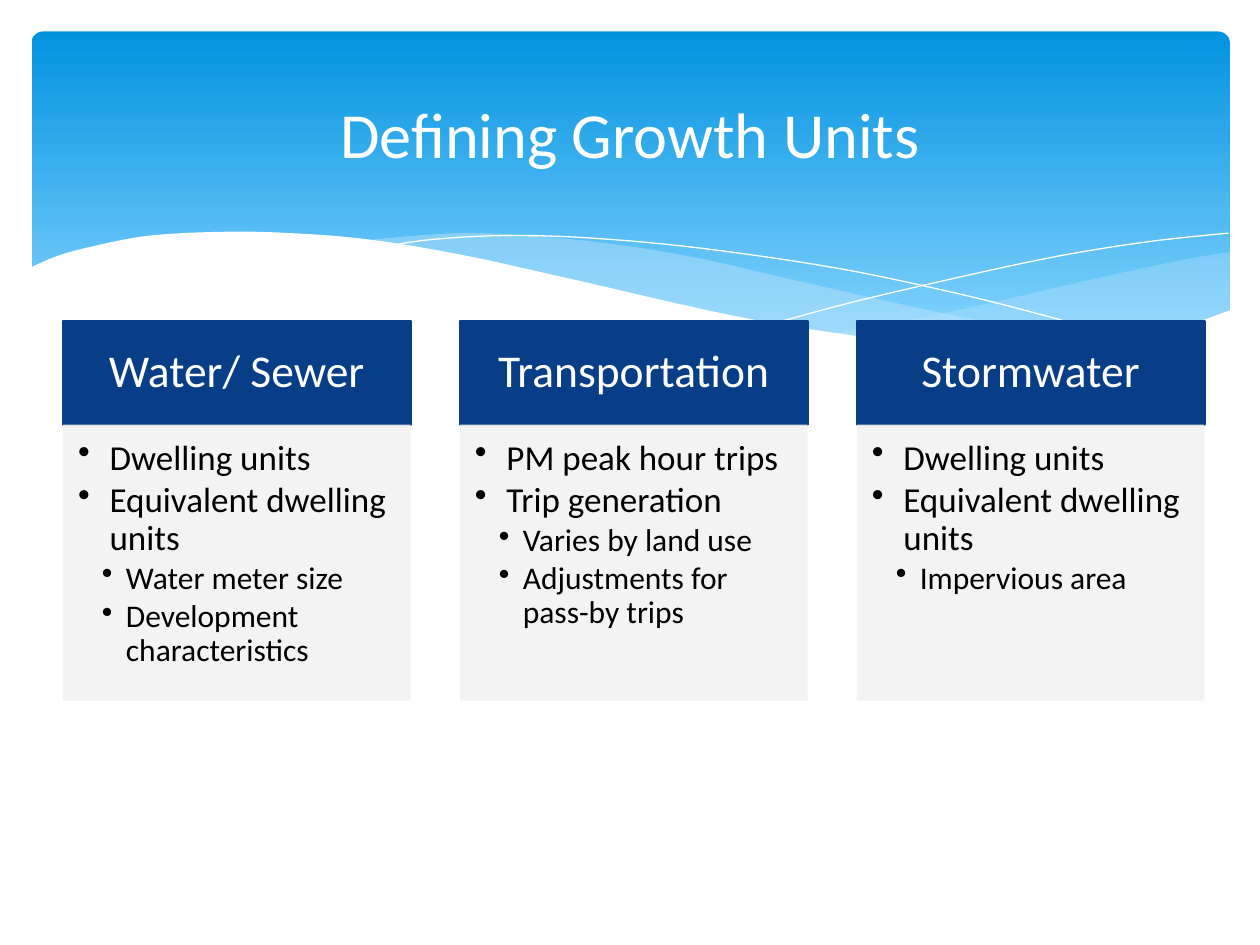
from lxml import etree
from pptx import Presentation
from pptx.dml.color import RGBColor
from pptx.enum.shapes import MSO_SHAPE
from pptx.enum.text import MSO_ANCHOR, PP_ALIGN
from pptx.oxml.ns import qn
from pptx.util import Inches, Pt

FONT = "Calibri"
WHITE, NAVY, GREY, BLACK, PALE_BLUE = "FFFFFF", "073E87", "F2F2F2", "000000", "C6E7FC"
SKY_TOP, SKY_BOTTOM = "0293E0", "83D3FE"

RIGHT_WAVE = [
    [(9.76, 2), (9.35, 2.07), (8.61, 2.23), (7.79, 2.42), (7.06, 2.57), (6.61, 2.65)],
    [(6.61, 2.65), (7.05, 2.71), (7.57, 2.76), (8.03, 2.78), (8.54, 2.76),
     (8.97, 2.7), (9.35, 2.62), (9.76, 2.47)],
]
MIDDLE_WAVE = [
    [(8.93, 2.73), (8.37, 2.65), (7.41, 2.47), (6.29, 2.22), (5.55, 2.05),
     (4.89, 1.94), (4.2, 1.87), (3.61, 1.85), (2.86, 1.91)],
    [(2.86, 1.91), (3.62, 2.03), (4.49, 2.22), (5.3, 2.4), (6.18, 2.58),
     (6.95, 2.7), (7.61, 2.77), (8.18, 2.78), (8.93, 2.73)],
]
FALLING_LINE = [[(3.09, 1.95), (3.44, 1.9), (4.01, 1.87), (4.69, 1.89), (5.56, 1.97),
                 (6.65, 2.13), (7.6, 2.33), (8.31, 2.51), (9.07, 2.72)]]
RISING_LINE = [[(6.13, 2.57), (6.72, 2.41), (7.48, 2.23), (8.36, 2.04),
                (9.1, 1.92), (9.75, 1.85)]]
WHITE_WAVE = [
    [(9.77, 2.46), (9.3, 2.62), (8.75, 2.73), (8.09, 2.77), (7.44, 2.74), (6.68, 2.65),
     (5.79, 2.5), (4.47, 2.2), (3.65, 2.02), (2.92, 1.9), (2.3, 1.85), (1.77, 1.84),
     (1.19, 1.87), (0.76, 1.95), (0.46, 2.03), (0.23, 2.13)],
    [(0.23, 3.29), (9.77, 3.29)],
]
COLUMNS = [
    ("Water/ Sewer", [(1, "Dwelling units"), (1, "Equivalent dwelling units"),
                      (2, "Water meter size"), (2, "Development characteristics")]),
    ("Transportation", [(1, "PM peak hour trips"), (1, "Trip generation"),
                        (2, "Varies by land use"), (2, "Adjustments for pass-by trips")]),
    ("Stormwater", [(1, "Dwelling units"), (1, "Equivalent dwelling units"),
                    (2, "Impervious area")]),
]
LEVEL_STYLES = {1: (20, 0.25, 0.25), 2: (18, 0.38, 0.19)}


def color(value):
    """Turn a hex string into a colour."""
    return RGBColor.from_string(value)


def paint(shape, fill=None, opacity=100, line=None, width=0):
    """Set the fill, its opacity and the outline of a shape."""
    shape.shadow.inherit = False
    if fill:
        shape.fill.solid()
        shape.fill.fore_color.rgb = color(fill)
        if opacity < 100:
            tint = shape.fill._xPr.find(".//" + qn("a:srgbClr"))
            etree.SubElement(tint, qn("a:alpha"), val=str(opacity * 1000))
    else:
        shape.fill.background()
    if line:
        shape.line.color.rgb = color(line)
        shape.line.width = Pt(width)
    else:
        shape.line.fill.background()


def smooth(points, steps=6):
    """Return points along a Catmull-Rom curve through the given points."""
    if len(points) < 3:
        return points
    padded = [points[0], *points, points[-1]]
    curve = [points[0]]
    for a, b, c, d in zip(padded, padded[1:], padded[2:], padded[3:]):
        for step in range(1, steps + 1):
            t = step / steps
            curve.append(tuple(
                (2 * q + (r - p) * t + (2 * p - 5 * q + 4 * r - s) * t ** 2
                 + (3 * q - p - 3 * r + s) * t ** 3) / 2
                for p, q, r, s in zip(a, b, c, d)))
    return curve


def add_wave(page, edges, close=True, **style):
    """Draw an outline made of smooth edges."""
    points = [(Inches(x), Inches(y)) for edge in edges for x, y in smooth(edge)]
    builder = page.shapes.build_freeform(*points[0])
    builder.add_line_segments(points[1:], close=close)
    paint(builder.convert_to_shape(), **style)


def add_backdrop(page, left, top, width, height):
    """Draw the sky panel and the waves across its lower edge."""
    panel = page.shapes.add_shape(MSO_SHAPE.ROUNDED_RECTANGLE, left, top, width, height)
    panel.adjustments[0] = 0.034
    paint(panel)
    panel.fill.gradient()
    panel.fill.gradient_angle = 270
    for stop, position, value in zip(panel.fill.gradient_stops, (0, 0.9), (SKY_TOP, SKY_BOTTOM)):
        stop.position = position
        stop.color.rgb = color(value)
    add_wave(page, RIGHT_WAVE, fill=PALE_BLUE, opacity=29)
    add_wave(page, MIDDLE_WAVE, fill=PALE_BLUE, opacity=40)
    for line in (FALLING_LINE, RISING_LINE):
        add_wave(page, line, close=False, line=WHITE)
    add_wave(page, WHITE_WAVE, fill=WHITE)


def set_frame(frame, anchor, left, top, right, bottom):
    """Set wrapping, anchor and margins of a text frame."""
    frame.word_wrap = True
    frame.vertical_anchor = anchor
    frame.margin_left, frame.margin_top = Inches(left), Inches(top)
    frame.margin_right, frame.margin_bottom = Inches(right), Inches(bottom)


def write(para, text, size, value, align=PP_ALIGN.LEFT):
    """Write one paragraph in one style."""
    para.text = text
    para.alignment = align
    para.font.name = FONT
    para.font.size = Pt(size)
    para.font.color.rgb = color(value)


def add_title(page, text, left, top, width, height):
    """Add the centred slide title."""
    box = page.shapes.add_textbox(left, top, width, height)
    set_frame(box.text_frame, MSO_ANCHOR.MIDDLE, 0.1, 0.05, 0.1, 0.05)
    write(box.text_frame.paragraphs[0], text, 36.7, WHITE, PP_ALIGN.CENTER)


def write_bullet(para, text, level):
    """Write one bulleted paragraph of the given level."""
    size, margin, hanging = LEVEL_STYLES[level]
    write(para, text, size, BLACK)
    para.level = level
    para.line_spacing = 0.9
    para.space_after = Pt(size * 0.13)
    properties = para._p.get_or_add_pPr()
    properties.set("marL", str(Inches(margin)))
    properties.set("indent", str(-Inches(hanging)))
    bullet = etree.Element(qn("a:buChar"), char="•")
    properties.find(qn("a:defRPr")).addprevious(bullet)


def add_column(page, heading, bullets, left, top, width, height):
    """Add a heading band above a panel of bullets."""
    band_height = Inches(0.82)
    band = page.shapes.add_shape(MSO_SHAPE.RECTANGLE, left, top, width, band_height)
    paint(band, fill=NAVY, line=NAVY, width=1.25)
    set_frame(band.text_frame, MSO_ANCHOR.MIDDLE, 0.2, 0.12, 0.2, 0.12)
    title = band.text_frame.paragraphs[0]
    write(title, heading, 26, WHITE, PP_ALIGN.CENTER)
    title.line_spacing = 0.9

    panel = page.shapes.add_shape(
        MSO_SHAPE.RECTANGLE, left, top + band_height, width, height - band_height)
    paint(panel, fill=GREY, opacity=90)
    frame = panel.text_frame
    set_frame(frame, MSO_ANCHOR.TOP, 0.12, 0.12, 0.16, 0.17)
    for index, (level, text) in enumerate(bullets):
        para = frame.add_paragraph() if index else frame.paragraphs[0]
        write_bullet(para, text, level)


def main():
    """Build and save the slide."""
    deck = Presentation()
    deck.slide_width, deck.slide_height = Inches(10), Inches(7.5)
    page = deck.slides.add_slide(deck.slide_layouts[6])
    add_backdrop(page, Inches(0.25), Inches(0.25), Inches(9.51), Inches(2.7))
    add_title(page, "Defining Growth Units", Inches(0.5), Inches(0.37), Inches(9), Inches(1.37))
    for index, (heading, bullets) in enumerate(COLUMNS):
        left = Inches(0.5 + 3.15 * index)
        add_column(page, heading, bullets, left, Inches(2.55), Inches(2.76), Inches(3.01))
    deck.save("out.pptx")


if __name__ == "__main__":
    main()
